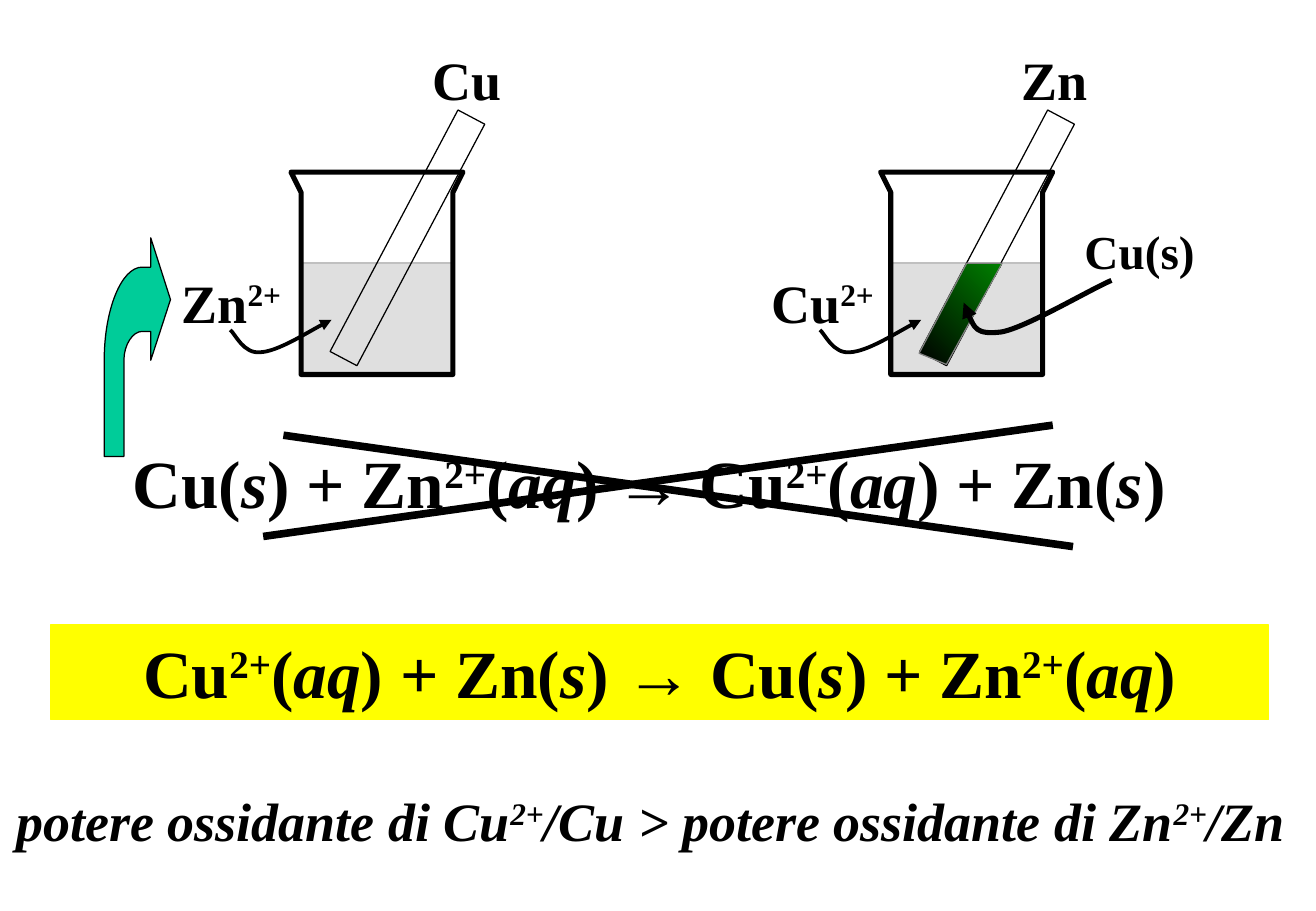
from dataclasses import dataclass

from lxml import etree
from pptx import Presentation
from pptx import util as u
from pptx.dml.color import RGBColor
from pptx.enum import shapes, text
from pptx.oxml.ns import qn

COLS, ROWS = 130, 90
CELL = u.Inches(1) // 12

Point = tuple[float, float]


@dataclass(frozen=True)
class Theme:
    font: str = "Times New Roman"
    ink: str = "000000"
    water: str = "C0C0C0"
    mark: str = "FFFF00"
    arrow: str = "00CC99"
    copper: str = "008000"
    edge: str = "808080"
    small: int = 28
    label: int = 32
    large: int = 40
    thin: float = 0.75
    curve: float = 2.25
    bold: float = 3
    cross: float = 4.5


@dataclass(frozen=True)
class Beaker:
    col: float
    metal: str
    ion: str


@dataclass(frozen=True)
class Box:
    col: float
    row: float
    wide: float
    high: float

    def emu(self) -> list[int]:
        return [cells(v) for v in (self.col, self.row, self.wide, self.high)]


THEME = Theme()
TOP = 17
BEAKERS = (Beaker(28.75, "Cu", "Zn^2+^"), Beaker(87, "Zn", "Cu^2+^"))


def cells(count: float) -> int:
    return round(count * CELL)


def rgb(code: str) -> RGBColor:
    return RGBColor.from_string(code)


def paint(shape, fill: str | None, line: str, width: float) -> None:
    if fill:
        shape.fill.solid()
        shape.fill.fore_color.rgb = rgb(fill)
    else:
        shape.fill.background()
    shape.line.color.rgb = rgb(line)
    shape.line.width = u.Pt(width)


def write(area, words: str, box: Box, *, size: int = THEME.label, italic: bool = False,
          center: bool = False, wrap: bool = False, fill: str | None = None) -> None:
    """Add bold text in which _..._ is italic and ^...^ is raised."""
    label = area.add_textbox(*box.emu())
    if fill:
        paint(label, fill, fill, THEME.thin)
    frame = label.text_frame
    frame.word_wrap = wrap
    frame.auto_size = text.MSO_AUTO_SIZE.SHAPE_TO_FIT_TEXT
    para = frame.paragraphs[0]
    para.alignment = text.PP_ALIGN.CENTER if center else text.PP_ALIGN.LEFT
    for i, chunk in enumerate(words.split("^")):
        for j, part in enumerate(chunk.split("_")):
            if not part:
                continue
            run = para.add_run()
            run.text = part
            font = run.font
            font.name, font.size, font.bold = THEME.font, u.Pt(size), True
            font.italic = italic or j % 2 == 1
            font.color.rgb = rgb(THEME.ink)
            if i % 2:
                font._element.set("baseline", "30000")


def trace(area, points: list[Point], *, bends: tuple[int, ...] = (),
          fill: str | None = None, line: str = THEME.ink, width: float = THEME.thin,
          close: bool = True, tip: str | None = None):
    """Draw an outline; a Bezier curve starts at each point numbered in bends,
    and tip names the line end that bears an arrowhead."""
    spots = [(cells(x), cells(y)) for x, y in points]
    pen = area.build_freeform(*spots[0])
    pen.add_line_segments(spots[1:], close=close)
    shape = pen.convert_to_shape()
    shape.shadow.inherit = False
    paint(shape, fill, line, width)
    legs = list(shape._element.iter(qn("a:lnTo")))
    for start in bends:
        first, *rest = legs[start:start + 3]
        first.tag = qn("a:cubicBezTo")
        for leg in rest:
            first.append(leg[0])
            leg.getparent().remove(leg)
    if tip:
        etree.SubElement(shape.line._get_or_add_ln(), qn(f"a:{tip}"), type="triangle")
    return shape


def block(area, box: Box, *, fill: str | None = None, line: str = THEME.ink):
    shape = area.add_shape(shapes.MSO_SHAPE.RECTANGLE, *box.emu())
    shape.shadow.inherit = False
    paint(shape, fill, line, THEME.thin)
    return shape


def draw(area, cup: Beaker) -> None:
    def move(*points: Point) -> list[Point]:
        return [(cup.col + x, TOP + y) for x, y in points]

    def place(x: float, y: float, wide: float, high: float) -> Box:
        return Box(cup.col + x, TOP + y, wide, high)

    water = block(area, place(1, 9, 15, 11), fill=THEME.water, line=THEME.water)
    tone = water.fill._xPr.find(f".//{qn('a:srgbClr')}")
    etree.SubElement(tone, qn("a:alpha"), val="50000")
    trace(area, move((0, 0), (1, 2), (1, 20), (16, 20), (16, 2), (17, 0), (0, 0)),
          width=THEME.bold)
    block(area, place(10, -7, 3, 27)).rotation = 27.9
    write(area, cup.metal, place(12.75, -13, 9.2, 7.6))
    write(area, cup.ion, place(-12, 9, 12.8, 7.6))
    path = move((-6, 15.6), (-5.5, 16), (-4.7, 18), (-3, 17.8),
                (-1.3, 17.7), (2.5, 15.3), (4, 14.6))
    trace(area, path, bends=(0, 3), width=THEME.curve, close=False, tip="tailEnd")


def strike(area, start: Point, end: Point) -> None:
    line = area.add_connector(shapes.MSO_CONNECTOR.STRAIGHT,
                              *(cells(v) for v in start + end))
    line.line.color.rgb = rgb(THEME.ink)
    line.line.width = u.Pt(THEME.cross)
    etree.SubElement(line._element.spPr, qn("a:effectLst"))


def coat(area) -> None:
    """Draw the copper layer on the zinc rod."""
    layer = trace(area, [(95.5, 26), (99, 26), (93.5, 36), (90.8, 34.9), (95.5, 26)],
                  line=THEME.edge)
    layer.fill.gradient()
    layer.fill.gradient_angle = 45
    for stop, tone, spot in zip(layer.fill.gradient_stops,
                                (THEME.ink, THEME.copper), (0, 1)):
        stop.color.rgb = rgb(tone)
        stop.position = spot


def main() -> None:
    deck = Presentation()
    deck.slide_width, deck.slide_height = cells(COLS), cells(ROWS)
    area = deck.slides.add_slide(deck.slide_layouts[6]).shapes

    left, right = (area.add_group_shape().shapes for _ in BEAKERS)
    for group, cup in zip((left, right), BEAKERS):
        draw(group, cup)
    write(left, "Cu(_s_) + Zn^2+^(_aq_) → Cu^2+^(_aq_) + Zn(_s_) ",
          Box(4.75, 43, 120.4, 9.2), size=THEME.large, center=True, wrap=True)

    coat(area)
    write(area, "Cu^2+^(_aq_) + Zn(_s_) → Cu(_s_) + Zn^2+^(_aq_)",
          Box(5, 61.75, 120.35, 9.35), size=THEME.large, center=True, wrap=True,
          fill=THEME.mark)
    cross = area.add_group_shape().shapes
    strike(cross, (26, 53), (104, 42))
    strike(cross, (106, 54), (28, 43))
    write(area, "potere ossidante di Cu^2+^/Cu > potere ossidante di Zn^2+^/Zn",
          Box(0, 77.25, 128.55, 7.6), italic=True, center=True)

    hook = [(95.2, 29.9), (95.9, 31.8), (96.4, 33.1), (98.9, 32.8),
            (101.3, 32.4), (107.5, 28.7), (109.8, 27.7)]
    trace(area, hook, bends=(0, 3), width=THEME.bold, close=False, tip="headEnd")
    write(area, "Cu(s)", Box(105.95, 21.4, 14, 6.8), size=THEME.small, wrap=True)

    swoop = [(16.85, 29.6), (14.9, 23.5), (14.9, 26.4), (14.05, 26.4),
             (12, 26.4), (10.3, 30.6), (10.3, 35.6), (10.3, 45.1),
             (12.25, 45.1), (12.25, 35.6), (12.25, 34.1), (13.1, 32.75),
             (14.05, 32.75), (14.9, 32.75), (14.9, 35.6)]
    trace(area, swoop, bends=(3, 9), fill=THEME.arrow)
    deck.save("out.pptx")


if __name__ == "__main__":
    main()
